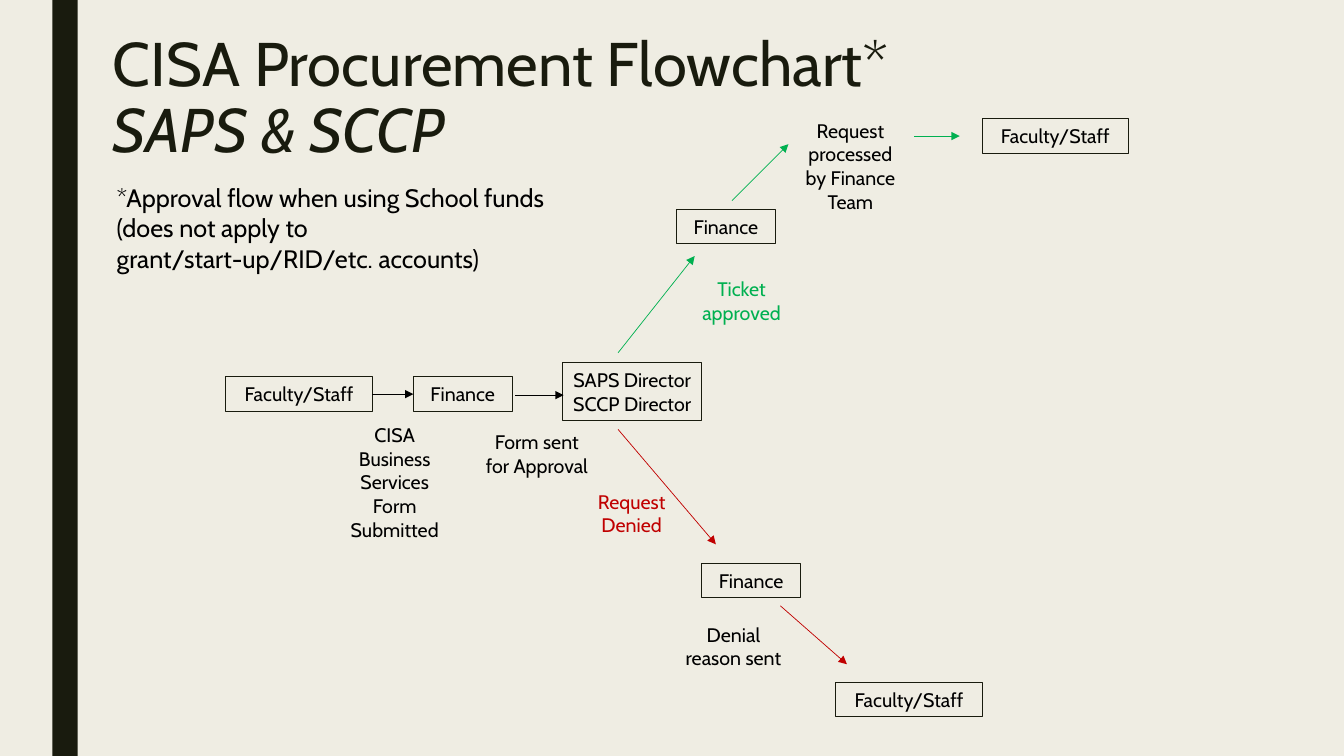
from lxml import etree
from pptx import Presentation
from pptx.dml.color import RGBColor
from pptx.enum.shapes import MSO_CONNECTOR, MSO_SHAPE
from pptx.enum.text import MSO_ANCHOR, MSO_AUTO_SIZE, PP_ALIGN
from pptx.oxml.ns import qn
from pptx.util import Pt

RECTANGLE = MSO_SHAPE.RECTANGLE
STRAIGHT = MSO_CONNECTOR.STRAIGHT
CENTER, LEFT = PP_ALIGN.CENTER, PP_ALIGN.LEFT
MIDDLE, TOP = MSO_ANCHOR.MIDDLE, MSO_ANCHOR.TOP
GROW, FIXED = MSO_AUTO_SIZE.SHAPE_TO_FIT_TEXT, MSO_AUTO_SIZE.NONE

EMU_PER_PX = 9144
FONT = "Cabin"
COLORS = {
    "paper": "EFEDE3",
    "ink": "191B0E",
    "text": "000000",
    "approved": "00B050",
    "denied": "C00000",
}
STEP_HEIGHT = 34
STEP_WIDTHS = {"Finance": 98, "Faculty/Staff": 145}


def px(*lengths):
    """Turn px lengths into EMU."""
    return [length * EMU_PER_PX for length in lengths]


def color(name):
    """Return a named colour."""
    return RGBColor.from_string(COLORS[name])


def apply_format(target, values):
    """Set every attribute named in a dict of format values."""
    for name, value in values.items():
        setattr(target, name, value)


def write(shape, lines, size=14, ink="text", align=CENTER, anchor=TOP,
          auto_size=GROW, spacing=None, italic_line=None):
    """Write one paragraph per line into a shape."""
    frame = shape.text_frame
    apply_format(frame, {"word_wrap": True, "auto_size": auto_size,
                         "vertical_anchor": anchor})
    for index, line in enumerate(lines):
        para = frame.paragraphs[0] if index == 0 else frame.add_paragraph()
        apply_format(para, {"alignment": align, "line_spacing": spacing})
        span = para.add_run()
        span.text = line
        apply_format(span.font, {"name": FONT, "size": Pt(size),
                                 "italic": index == italic_line})
        span.font.color.rgb = color(ink)


def add_bar(page, left, top, width, height):
    """Add the solid vertical bar."""
    bar = page.shapes.add_shape(RECTANGLE, *px(left, top, width, height))
    bar.shadow.inherit = False
    bar.fill.solid()
    bar.fill.fore_color.rgb = color("ink")
    bar.line.fill.background()


def add_step(page, lines, left, top, width, height=STEP_HEIGHT):
    """Add an outlined flowchart step and return it."""
    box = page.shapes.add_shape(RECTANGLE, *px(left, top, width, height))
    box.shadow.inherit = False
    box.fill.background()
    box.line.color.rgb = color("ink")
    box.line.width = Pt(0.75)
    write(box, lines, anchor=MIDDLE)
    return box


def add_text(page, lines, left, top, width, height, **style):
    """Add a text box."""
    box = page.shapes.add_textbox(*px(left, top, width, height))
    write(box, lines, **style)


def add_arrow(page, start, end, ink):
    """Add a thin arrow and return it."""
    arrow = page.shapes.add_connector(STRAIGHT, *px(*start, *end))
    arrow.line.color.rgb = color(ink)
    arrow.line.width = Pt(0.5)
    outline = arrow.line._get_or_add_ln()
    etree.SubElement(outline, qn("a:tailEnd"), type="triangle")
    etree.SubElement(arrow._element.spPr, qn("a:effectLst"))
    return arrow


def main():
    """Build the procurement flowchart."""
    deck = Presentation()
    deck.slide_width, deck.slide_height = px(1333, 750)
    page = deck.slides.add_slide(deck.slide_layouts[6])
    page.background.fill.solid()
    page.background.fill.fore_color.rgb = color("paper")

    add_bar(page, 52, 0, 25, 750)
    add_text(page, ["CISA Procurement Flowchart*", "SAPS & SCCP"],
             102, 29, 1050, 72, size=44, ink="ink", align=LEFT,
             auto_size=FIXED, spacing=0.89, italic_line=1)
    add_text(page, ["*Approval flow when using School funds (does not apply to "
                    "grant/start-up/RID/etc. accounts)"],
             106, 176, 464, 101, size=18, align=LEFT)

    steps = [
        ("Faculty/Staff", 224, 374),
        ("Finance", 410, 374),
        ("Finance", 671, 208),
        ("Faculty/Staff", 974, 118),
        ("Finance", 696, 559),
        ("Faculty/Staff", 829, 677),
    ]
    requester, reviewer, *_ = [
        add_step(page, [name], left, top, STEP_WIDTHS[name])
        for name, left, top in steps
    ]
    add_step(page, ["SAPS Director", "SCCP Director"], 558, 360, 138, 57)

    labels = [
        ("CISA Business Services Form Submitted", 330, 415, 123, 128, "text"),
        ("Form sent for Approval", 471, 422, 123, 57, "text"),
        ("Request Denied", 561, 481, 131, 57, "denied"),
        ("Ticket approved", 670, 270, 131, 57, "approved"),
        ("Request processed by Finance Team", 782, 113, 123, 104, "text"),
        ("Denial reason sent", 666, 613, 123, 57, "text"),
    ]
    for label, left, top, width, height, ink in labels:
        add_text(page, [label], left, top, width, height, ink=ink)

    submission = add_arrow(page, (369, 391), (410, 391), "text")
    submission.begin_connect(requester, 3)
    submission.end_connect(reviewer, 1)
    arrows = [
        ((511, 392), (559, 392), "text"),
        ((613, 350), (689, 254), "approved"),
        ((726, 199), (782, 143), "approved"),
        ((907, 135), (952, 135), "approved"),
        ((613, 426), (710, 540), "denied"),
        ((774, 601), (840, 659), "denied"),
    ]
    for start, end, ink in arrows:
        add_arrow(page, start, end, ink)

    deck.save("out.pptx")


if __name__ == "__main__":
    main()
